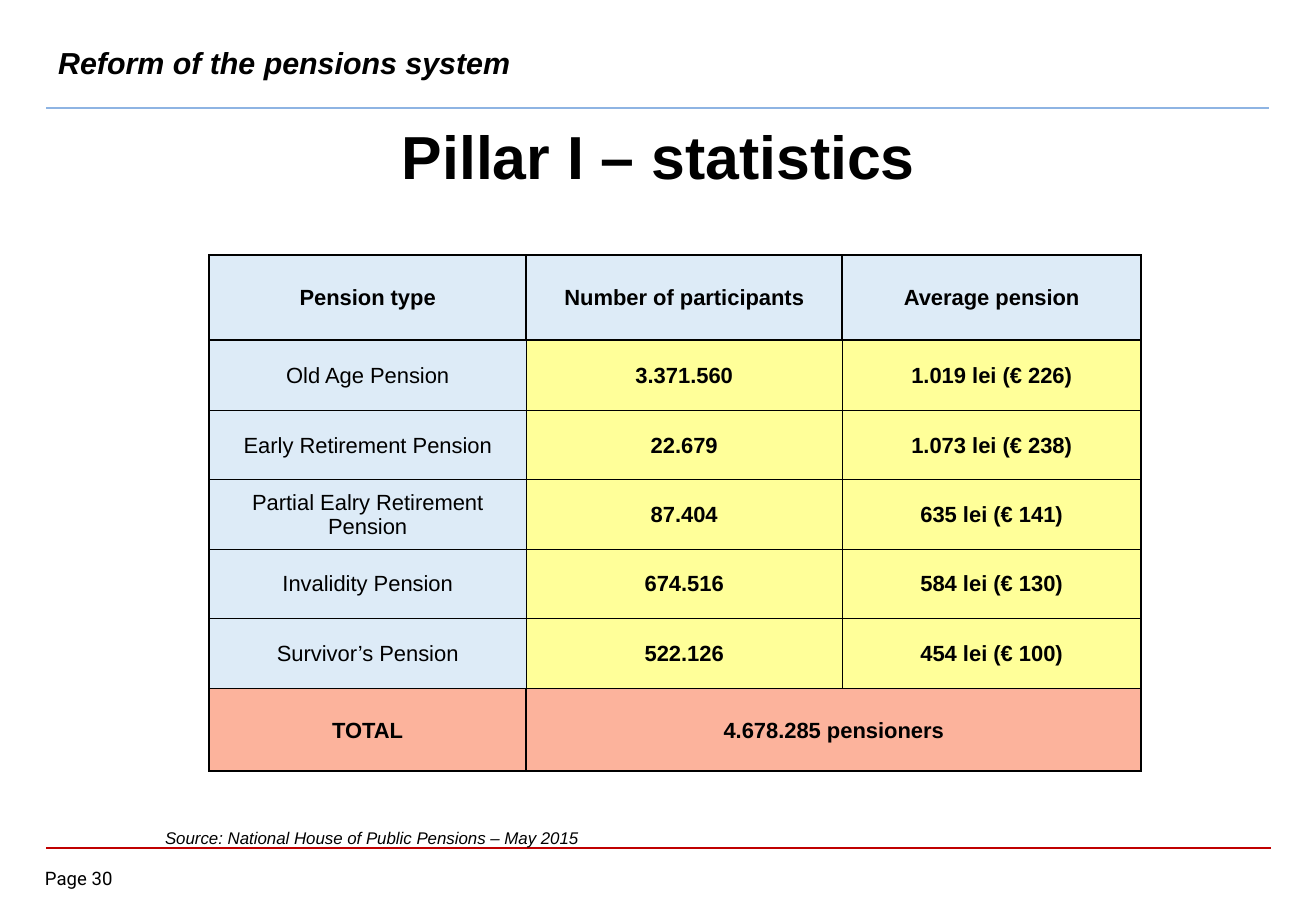
from lxml.etree import SubElement
from pptx import Presentation
from pptx.dml.color import RGBColor
from pptx.enum.shapes import MSO_CONNECTOR
from pptx.enum.text import MSO_ANCHOR, PP_ALIGN
from pptx.oxml import parse_xml
from pptx.oxml.ns import nsdecls, qn
from pptx.util import Inches, Pt

BLACK = RGBColor(0x00, 0x00, 0x00)
RED = RGBColor(0xC0, 0x00, 0x00)
BLUE = RGBColor(0x8E, 0xB4, 0xE3)
PALE_BLUE = RGBColor(0xDD, 0xEB, 0xF7)
YELLOW = RGBColor(0xFF, 0xFF, 0x99)
SALMON = RGBColor(0xFC, 0xB3, 0x9C)

PENSIONS = [
    ("Pension type", "Number of participants", "Average pension"),
    ("Old Age Pension", "3.371.560", "1.019 lei (€ 226)"),
    ("Early Retirement Pension", "22.679", "1.073 lei (€ 238)"),
    ("Partial Ealry Retirement Pension", "87.404", "635 lei (€ 141)"),
    ("Invalidity Pension", "674.516", "584 lei (€ 130)"),
    ("Survivor’s Pension", "522.126", "454 lei (€ 100)"),
    ("TOTAL", "4.678.285 pensioners", ""),
]
COL_WIDTHS = [2.61, 2.6, 2.46]
ROW_HEIGHTS = [0.7, 0.58, 0.57, 0.57, 0.57, 0.58, 0.68]


class SlideBuilder:
    """Adds lines, text and tables in one style to the current slide."""

    def __init__(self, slide, font="Arial", color=BLACK):
        self.slide = slide
        self.font = font
        self.color = color

    def style(self, p, size, **fmt):
        values = {"name": self.font, "size": Pt(size), **fmt}
        for name, value in values.items():
            setattr(p.font, name, value)
        p.font.color.rgb = self.color

    def line(self, left, right, y, color, width):
        sp = self.slide.shapes.add_connector(
            MSO_CONNECTOR.STRAIGHT, Inches(left), Inches(y), Inches(right), Inches(y))
        sp.line.color.rgb = color
        sp.line.width = Pt(width)
        SubElement(sp._element.spPr, qn("a:effectLst"))

    def text(self, text, box, size, frame=None, para=None, **fmt):
        sp = self.slide.shapes.add_textbox(*(Inches(v) for v in box))
        tf = sp.text_frame
        p = tf.paragraphs[0]
        p.text = text
        for target, values in ((tf, {"word_wrap": True, **(frame or {})}), (p, para or {})):
            for name, value in values.items():
                setattr(target, name, value)
        self.style(p, size, **fmt)

    def borders(self, cell, widths):
        tc_pr = cell._tc.get_or_add_tcPr()
        for i, (side, width) in enumerate(widths.items()):
            tc_pr.insert(i, parse_xml(
                f'<a:ln{side} {nsdecls("a")} w="{Pt(width)}"><a:solidFill>'
                f'<a:srgbClr val="{self.color}"/></a:solidFill></a:ln{side}>'))

    def cell(self, cell, text, fill, bold):
        values = {"vertical_anchor": MSO_ANCHOR.MIDDLE, "margin_left": Inches(0.01),
                  "margin_right": Inches(0.01), "margin_top": Inches(0.01),
                  "margin_bottom": 0}
        for name, value in values.items():
            setattr(cell, name, value)
        cell.fill.solid()
        cell.fill.fore_color.rgb = fill
        p = cell.text_frame.paragraphs[0]
        p.text = text
        p.alignment = PP_ALIGN.CENTER
        self.style(p, 13, bold=bold)

    def table(self, rows, left, top, widths, heights):
        last, end = len(rows) - 1, len(widths) - 1
        table = self.slide.shapes.add_table(
            len(rows), len(widths), Inches(left), Inches(top),
            Inches(sum(widths)), Inches(sum(heights))).table
        table.first_row = table.horz_banding = False
        for col, width in zip(table.columns, widths):
            col.width = Inches(width)
        for row, height in zip(table.rows, heights):
            row.height = Inches(height)
        for r, row in enumerate(rows):
            framed = r in (0, last)
            for c, text in enumerate(row):
                fill = SALMON if r == last else PALE_BLUE if r == 0 or c == 0 else YELLOW
                cell = table.cell(r, c)
                self.cell(cell, text, fill, framed or c > 0)
                thick = {"L": framed or c == 0, "R": framed or c == end,
                         "T": framed or r == 1, "B": framed or r == last - 1}
                self.borders(cell, {side: 1 if on else 0.5 for side, on in thick.items()})
        table.cell(last, 1).merge(table.cell(last, end))


def main():
    prs = Presentation()
    prs.slide_width, prs.slide_height = Inches(10.83), Inches(7.5)
    s = SlideBuilder(prs.slides.add_slide(prs.slide_layouts[6]))
    middle = {"vertical_anchor": MSO_ANCHOR.MIDDLE}
    no_margins = dict.fromkeys(
        ("margin_left", "margin_right", "margin_top", "margin_bottom"), 0)

    s.line(0.38, 10.46, 6.98, RED, 1)
    s.line(0.38, 10.44, 0.89, BLUE, 1.5)
    s.text("Page 30", (0.37, 7.14, 0.73, 0.22), 11, no_margins, name="Roboto")
    s.text("Pillar I – statistics", (0.38, 0.91, 10.08, 0.74), 36, middle,
           {"alignment": PP_ALIGN.CENTER}, bold=True)
    s.table(PENSIONS, 1.72, 2.1, COL_WIDTHS, ROW_HEIGHTS)
    s.text("Source: National House of Public Pensions – May 2015",
           (1.26, 6.75, 4.69, 0.28), 10,
           para={"line_spacing": 1.07, "space_after": Pt(8)}, italic=True)
    s.text("Reform of the pensions system", (0.38, 0.26, 10.08, 0.5), 18, middle,
           bold=True, italic=True)
    prs.save("out.pptx")


if __name__ == "__main__":
    main()
